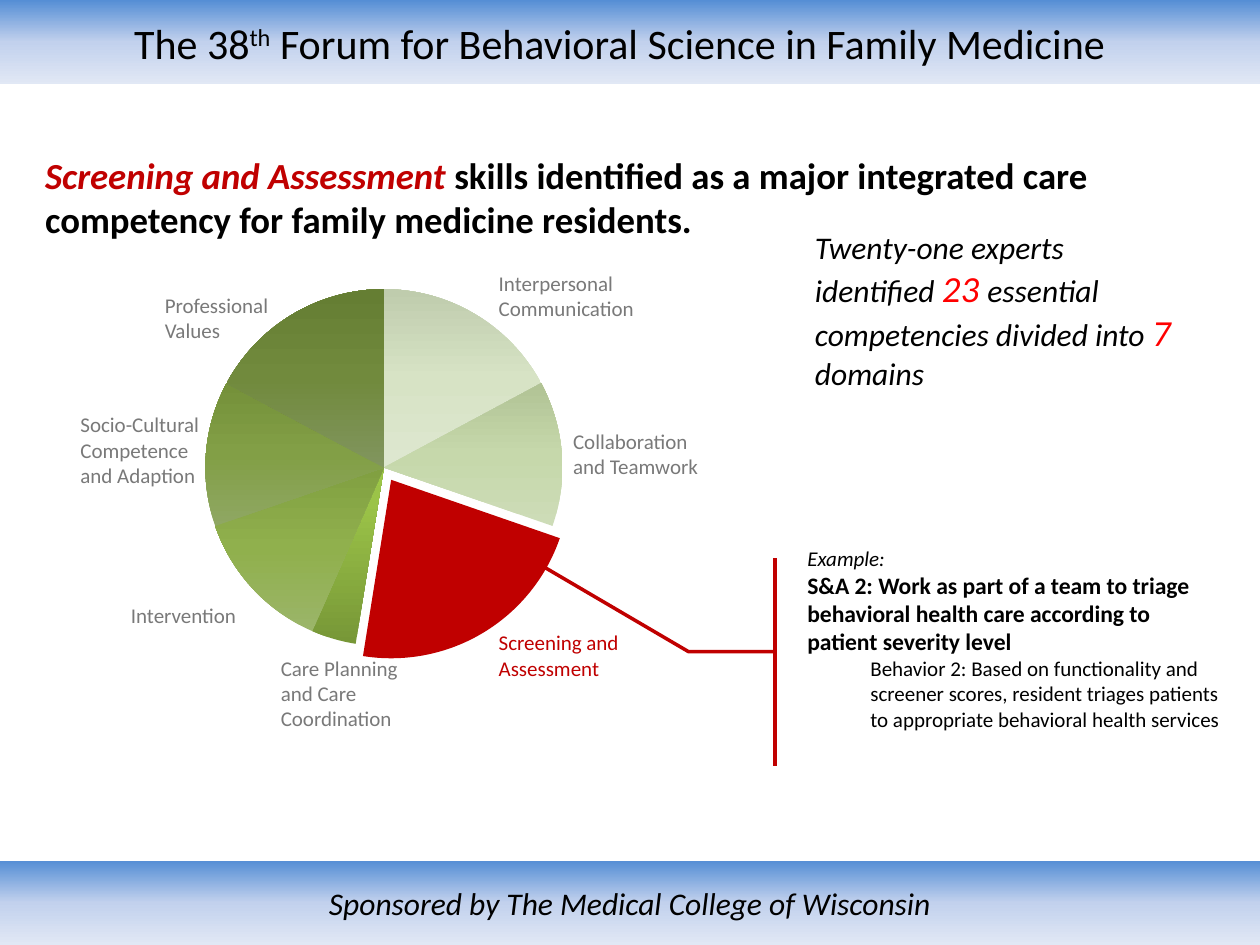
from copy import deepcopy
from typing import NamedTuple, Optional

from lxml.etree import SubElement
from pptx import Presentation
from pptx.chart.data import CategoryChartData
from pptx.dml.color import RGBColor
from pptx.enum.chart import XL_CHART_TYPE
from pptx.enum.shapes import MSO_SHAPE
from pptx.enum.text import MSO_ANCHOR, MSO_AUTO_SIZE, PP_ALIGN
from pptx.oxml import parse_xml
from pptx.oxml.ns import nsdecls, qn
from pptx.util import Inches, Pt

FONT = "Calibri"
SLIDE_WIDTH, SLIDE_HEIGHT = Inches(10), Inches(7.5)
BLACK = RGBColor(0x00, 0x00, 0x00)
GRAY = RGBColor(0x79, 0x79, 0x79)
CRIMSON = RGBColor(0xC0, 0x00, 0x00)
RED = RGBColor(0xFF, 0x00, 0x00)
BANNER_BLUES = (RGBColor(0x55, 0x8E, 0xD5), RGBColor(0xC2, 0xD1, 0xED), RGBColor(0xE1, 0xE8, 0xF5))
DOWNWARD, UPWARD = 270, 90


class Area(NamedTuple):
    """Percentages of the slide's width and height."""
    left: float
    top: float
    width: float
    height: float

    def emu(self) -> tuple:
        """Return the area in slide units."""
        sides = (SLIDE_WIDTH, SLIDE_HEIGHT) * 2
        return tuple(round(side * share / 100) for side, share in zip(sides, self))


class Domain(NamedTuple):
    """A competency domain: its label, share and slice colours."""
    label: str
    area: Area
    competencies: int
    shades: Optional[tuple] = None
    middle: float = 0.5


DOMAINS = (
    Domain("Interpersonal Communication", Area(38.6, 28, 13.9, 9.47), 17,
           (RGBColor(0xDD, 0xE7, 0xCF), RGBColor(0xD7, 0xE3, 0xC5), RGBColor(0xBF, 0xCC, 0xAD))),
    Domain("Collaboration and Teamwork", Area(44.5, 44.67, 12.3, 6.67), 13,
           (RGBColor(0xCD, 0xDC, 0xB7), RGBColor(0xC6, 0xD8, 0xAB), RGBColor(0xB1, 0xC3, 0x95))),
    Domain("Screening and Assessment", Area(38.6, 66, 11.6, 6.67), 22),
    Domain("Care Planning and Care Coordination", Area(21.3, 68.67, 11.5, 12.13), 4,
           (RGBColor(0x77, 0x97, 0x37), RGBColor(0x9B, 0xC3, 0x48), RGBColor(0x9D, 0xC7, 0x46)), 0.8),
    Domain("Intervention", Area(9.4, 63.07, 11.2, 4), 13,
           (RGBColor(0x9B, 0xB5, 0x69), RGBColor(0x90, 0xB0, 0x4D), RGBColor(0x81, 0xA0, 0x41))),
    Domain("Socio-Cultural Competence and Adaption", Area(5.4, 42.93, 11.4, 12.13), 13,
           (RGBColor(0x8F, 0xA7, 0x63), RGBColor(0x82, 0x9F, 0x46), RGBColor(0x75, 0x91, 0x3A))),
    Domain("Professional Values", Area(12.1, 30.27, 11, 9.47), 17,
           (RGBColor(0x81, 0x95, 0x5E), RGBColor(0x71, 0x8A, 0x3D), RGBColor(0x65, 0x7E, 0x33))),
)


def add_run(paragraph, text: str, *, size: float, color: RGBColor = BLACK, bold: bool = False,
            italic: bool = False, superscript: bool = False) -> None:
    """Append formatted text to a paragraph."""
    run = paragraph.add_run()
    run.text = text
    font = run.font
    font.name, font.size, font.bold, font.italic = FONT, Pt(size), bold, italic
    font.color.rgb = color
    if superscript:
        font._element.set("baseline", "30000")


def fill_gradient(fill, colors: tuple, angle: int, middle: float = 0.5) -> None:
    """Fill with a three-stop linear gradient."""
    fill.gradient()
    fill.gradient_angle = angle
    first = fill.gradient_stops[0]._gs
    first.addnext(deepcopy(first))
    for stop, color, position in zip(fill.gradient_stops, colors, (0, middle, 1)):
        stop.color.rgb, stop.position = color, position


def add_banner(slide, area: Area):
    """Draw a gradient band and return its text frame."""
    band = slide.shapes.add_shape(MSO_SHAPE.RECTANGLE, *area.emu())
    band.shadow.inherit = False
    band.line.fill.background()
    fill_gradient(band.fill, BANNER_BLUES, DOWNWARD)
    frame = band.text_frame
    frame.vertical_anchor = MSO_ANCHOR.MIDDLE
    frame.paragraphs[0].alignment = PP_ALIGN.CENTER
    return frame


def add_text_area(slide, area: Area):
    """Add a wrapping text box and return its text frame."""
    frame = slide.shapes.add_textbox(*area.emu()).text_frame
    frame.word_wrap = True
    frame.auto_size = MSO_AUTO_SIZE.SHAPE_TO_FIT_TEXT
    return frame


def add_domain_pie(slide, area: Area) -> None:
    """Draw the domains as a pie with the highlighted slice pulled out."""
    shares = CategoryChartData()
    shares.categories = [str(number) for number in range(1, len(DOMAINS) + 1)]
    shares.add_series("Series 1", [domain.competencies for domain in DOMAINS])
    pie = slide.shapes.add_chart(XL_CHART_TYPE.PIE, *area.emu(), shares).chart
    pie.has_title = pie.has_legend = False
    pie.font.name, pie.font.size, pie.font.color.rgb = FONT, Pt(10), BLACK
    plot = pie.plots[0]
    plot.vary_by_categories = True
    for index, domain in enumerate(DOMAINS):
        look = plot.series[0].points[index].format
        look.line.fill.background()
        if domain.shades:
            fill_gradient(look.fill, domain.shades, UPWARD, domain.middle)
        else:
            look.fill.solid()
            look.fill.fore_color.rgb = CRIMSON
            slice_xml = plot.series[0]._element.findall(qn("c:dPt"))[index]
            pulled = parse_xml(f'<c:explosion {nsdecls("c")} val="8"/>')
            slice_xml.find(qn("c:spPr")).addprevious(pulled)
    plot_area = pie._chartSpace.chart.plotArea
    for automatic in plot_area.findall(qn("c:layout")):
        plot_area.remove(automatic)
    layout = parse_xml(f'<c:layout {nsdecls("c")}/>')
    manual = SubElement(layout, qn("c:manualLayout"))
    settings = (("layoutTarget", "inner"), ("xMode", "edge"), ("yMode", "edge"),
                ("x", 0.3), ("y", 0.03), ("w", 0.62), ("h", 0.945))
    for tag, value in settings:
        SubElement(manual, qn(f"c:{tag}")).set("val", str(value))
    plot_area.insert(0, layout)


def add_example(slide) -> None:
    """Write the worked example beside the callout bar."""
    frame = add_text_area(slide, Area(63.1, 57.07, 34.7, 26.93))
    add_run(frame.paragraphs[0], "Example:", size=12, italic=True)
    add_run(frame.add_paragraph(), "S&A 2: Work as part of a team to triage behavioral health care "
            "according to patient severity level", size=13.5, bold=True)
    behavior = frame.add_paragraph()
    behavior.level = 1
    properties = behavior._p.get_or_add_pPr()
    properties.set("marL", str(Inches(0.5)))
    properties.set("indent", "0")
    add_run(behavior, "Behavior 2: Based on functionality and screener scores, resident triages "
            "patients to appropriate behavioral health services", size=12)


def add_callout(slide) -> None:
    """Draw the accent bar with its leader to the highlighted slice."""
    callout = slide.shapes.add_shape(MSO_SHAPE.LINE_CALLOUT_2_ACCENT_BAR,
                                     *Area(63.7, 59.07, 31.2, 22).emu())
    callout.shadow.inherit = False
    callout.fill.background()
    callout.line.color.rgb, callout.line.width = CRIMSON, Pt(2)
    for index, share in enumerate((0.45, -0.07, 0.45, -0.29, 0.04, -0.66)):
        callout.adjustments[index] = share


def main() -> None:
    """Build and save the slide."""
    deck = Presentation()
    deck.slide_width, deck.slide_height = SLIDE_WIDTH, SLIDE_HEIGHT
    slide = deck.slides.add_slide(deck.slide_layouts[6])

    header = add_banner(slide, Area(0, 0, 100, 8.93))
    header.margin_right = Inches(0.26)
    forum = header.paragraphs[0]
    add_run(forum, "The 38", size=24)
    add_run(forum, "th", size=24, superscript=True)
    add_run(forum, " Forum for Behavioral Science in Family Medicine", size=24)
    sponsor = add_banner(slide, Area(0, 91.07, 100, 8.93)).paragraphs[0]
    add_run(sponsor, "Sponsored by The Medical College of Wisconsin", size=18, italic=True)

    add_example(slide)
    heading = add_text_area(slide, Area(2.6, 15.47, 89.3, 10.8)).paragraphs[0]
    add_run(heading, "Screening and Assessment ", size=21, color=CRIMSON, bold=True, italic=True)
    add_run(heading, "skills identified as a major integrated care competency for family "
            "medicine residents.", size=21, bold=True)

    add_domain_pie(slide, Area(2.6, 28.93, 45.7, 40.93))
    for domain in DOMAINS:
        label = add_text_area(slide, domain.area).paragraphs[0]
        add_run(label, domain.label, size=12, color=GRAY if domain.shades else CRIMSON)

    finding = add_text_area(slide, Area(63.7, 23.47, 30.3, 18.8)).paragraphs[0]
    add_run(finding, "Twenty-one experts identified ", size=18, italic=True)
    add_run(finding, "23 ", size=21, color=RED, italic=True)
    add_run(finding, "essential competencies divided into ", size=18, italic=True)
    add_run(finding, "7", size=21, color=RED, italic=True)
    add_run(finding, " domains", size=18, italic=True)
    add_callout(slide)
    deck.save("out.pptx")


if __name__ == "__main__":
    main()
